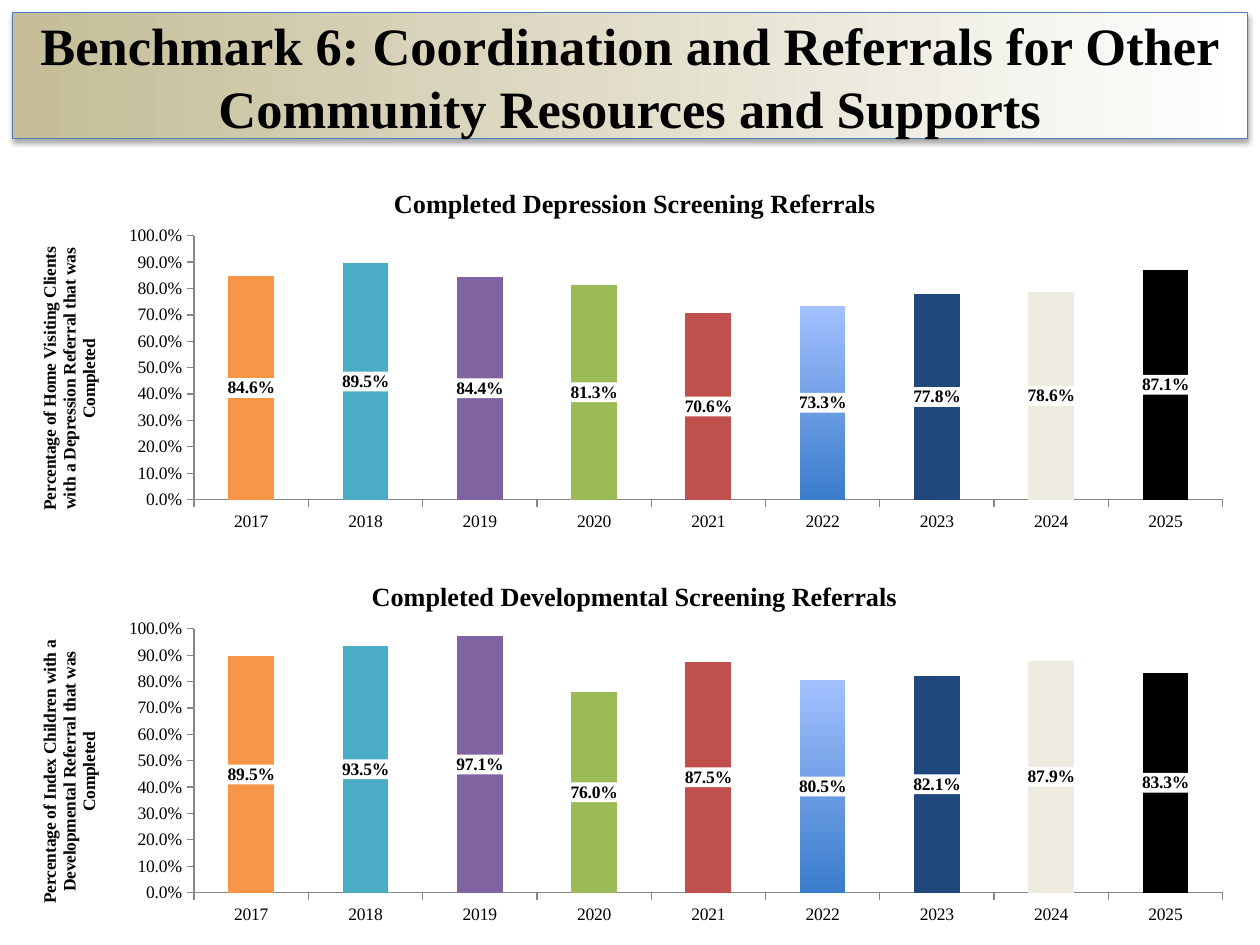
import lxml.etree
import pptx
import pptx.chart.data
import pptx.dml.color
import pptx.enum.chart
import pptx.enum.shapes
import pptx.enum.text
import pptx.oxml
import pptx.oxml.ns
import pptx.util

Pt = pptx.util.Pt
RGBColor = pptx.dml.color.RGBColor
qn = pptx.oxml.ns.qn

BLACK = RGBColor(0x00, 0x00, 0x00)
WHITE = RGBColor(0xFF, 0xFF, 0xFF)
TAN = RGBColor(0xC4, 0xBD, 0x97)
BANNER_LINE = RGBColor(0x4B, 0x7E, 0xBC)
AXIS_GRAY = RGBColor(0x86, 0x86, 0x86)
BLUE = RGBColor(0x4F, 0x81, 0xBD)
GRADIENT_BOTTOM = RGBColor(0x3A, 0x7C, 0xCB)
GRADIENT_TOP = RGBColor(0xA3, 0xC1, 0xFF)
YEAR_COLORS = {
    "2017": RGBColor(0xF7, 0x96, 0x46),
    "2018": RGBColor(0x4B, 0xAC, 0xC6),
    "2019": RGBColor(0x80, 0x64, 0xA2),
    "2020": RGBColor(0x9B, 0xBB, 0x59),
    "2021": RGBColor(0xC0, 0x50, 0x4D),
    "2022": None,  # gradient bar
    "2023": RGBColor(0x1F, 0x49, 0x7D),
    "2024": RGBColor(0xEE, 0xEC, 0xE1),
    "2025": BLACK,
}
SERIF = "Times New Roman"
PERCENT = "0.0%"
LEFT, WIDTH = Pt(7.2), Pt(705.6)

CHARTS = [
    ("Completed Depression Screening Referrals",
     "Percentage of Home Visiting Clients with a Depression Referral that was Completed",
     [0.846, 0.895, 0.844, 0.813, 0.706, 0.733, 0.778, 0.786, 0.871],
     92.2, 0.305),
    ("Completed Developmental Screening Referrals",
     "Percentage of Index Children with a Developmental Referral that was Completed",
     [0.895, 0.935, 0.971, 0.76, 0.875, 0.805, 0.821, 0.879, 0.833],
     316.8, 0.287),
]


def style_font(font, size, bold):
    font.name = SERIF
    font.size = Pt(size)
    font.bold = bold
    font.color.rgb = BLACK


def place(parent, following_tag, settings):
    """Give a chart title or plot area a manual layout."""
    for old_layout in parent.findall(qn("c:layout")):
        parent.remove(old_layout)
    layout = lxml.etree.Element(qn("c:layout"))
    manual = lxml.etree.SubElement(layout, qn("c:manualLayout"))
    for name, value in settings.items():
        lxml.etree.SubElement(manual, qn("c:" + name)).set("val", str(value))
    parent.find(qn(following_tag)).addprevious(layout)


presentation = pptx.Presentation()
presentation.slide_width = Pt(720)
presentation.slide_height = Pt(540)
slide = presentation.slides.add_slide(presentation.slide_layouts[6])

# Title banner
banner = slide.shapes.add_shape(
    pptx.enum.shapes.MSO_SHAPE.RECTANGLE, LEFT, Pt(7.2), WIDTH, Pt(72))
banner.fill.gradient()
banner.fill.gradient_angle = 0
for stop, color in zip(banner.fill.gradient_stops, (TAN, WHITE)):
    stop.color.rgb = color
banner.line.color.rgb = BANNER_LINE
banner.line.width = Pt(0.75)
banner.shadow.inherit = False
effects = banner._element.spPr.find(qn("a:effectLst"))
shadow = lxml.etree.SubElement(
    effects, qn("a:outerShdw"), blurRad=str(Pt(3.1)), dist=str(Pt(1.8)),
    dir="5400000", rotWithShape="0")
shadow_color = lxml.etree.SubElement(shadow, qn("a:srgbClr"), val="000000")
lxml.etree.SubElement(shadow_color, qn("a:alpha"), val="35000")

text_frame = banner.text_frame
text_frame.word_wrap = True
text_frame.vertical_anchor = pptx.enum.text.MSO_ANCHOR.MIDDLE
text_frame.text = ("Benchmark 6: Coordination and Referrals for Other "
                   "Community Resources and Supports")
paragraph = text_frame.paragraphs[0]
paragraph.alignment = pptx.enum.text.PP_ALIGN.CENTER
paragraph.line_spacing = Pt(36)
style_font(paragraph.runs[0].font, 30, True)

# Column charts
for title, axis_title, values, top, title_left in CHARTS:
    chart_data = pptx.chart.data.CategoryChartData(number_format=PERCENT)
    chart_data.categories = list(YEAR_COLORS)
    chart_data.add_series("Series 1", values)
    chart = slide.shapes.add_chart(
        pptx.enum.chart.XL_CHART_TYPE.COLUMN_CLUSTERED,
        LEFT, Pt(top), WIDTH, Pt(216), chart_data).chart
    chart.has_legend = False
    chart.font.name = "Calibri"
    chart.font.size = Pt(10)
    chart.font.color.rgb = BLACK

    # Chart title and plot position
    title_frame = chart.chart_title.text_frame
    title_frame.text = title
    style_font(title_frame.paragraphs[0].runs[0].font, 15, True)
    chart.chart_title.include_in_layout = False
    place(chart.chart_title._element, "c:overlay",
          {"xMode": "edge", "yMode": "edge", "x": title_left, "y": 0.055})
    place(chart._chartSpace.chart.plotArea, "c:barChart",
          {"layoutTarget": "inner", "xMode": "edge", "yMode": "edge",
           "x": 0.147, "y": 0.197, "w": 0.833, "h": 0.698})

    # Axes
    for axis in (chart.category_axis, chart.value_axis):
        axis.has_major_gridlines = False
        axis.major_tick_mark = pptx.enum.chart.XL_TICK_MARK.OUTSIDE
        axis.minor_tick_mark = pptx.enum.chart.XL_TICK_MARK.NONE
        axis.format.line.color.rgb = AXIS_GRAY
        axis.format.line.width = Pt(0.75)
        style_font(axis.tick_labels.font, 10, False)
    value_axis = chart.value_axis
    value_axis.minimum_scale = 0
    value_axis.maximum_scale = 1
    value_axis.major_unit = 0.1
    value_axis.tick_labels.number_format = PERCENT
    value_axis.tick_labels.number_format_is_linked = False
    axis_frame = value_axis.axis_title.text_frame
    axis_frame.text = axis_title
    style_font(axis_frame.paragraphs[0].runs[0].font, 10, True)

    # Bars, one colour per year
    plot = chart.plots[0]
    plot.gap_width = 150
    plot.vary_by_categories = False
    series = plot.series[0]
    series.format.fill.solid()
    series.format.fill.fore_color.rgb = BLUE
    for index, color in enumerate(YEAR_COLORS.values()):
        fill = series.points[index].format.fill
        if color is None:
            fill.gradient()
            fill.gradient_angle = 90
            for stop, stop_color in zip(
                    fill.gradient_stops, (GRADIENT_BOTTOM, GRADIENT_TOP)):
                stop.color.rgb = stop_color
        else:
            fill.solid()
            fill.fore_color.rgb = color

    # Value labels on white
    labels = series.data_labels
    labels.show_value = True
    labels.number_format = PERCENT
    labels.number_format_is_linked = False
    labels.position = pptx.enum.chart.XL_LABEL_POSITION.CENTER
    style_font(labels.font, 10, True)
    label_properties = lxml.etree.Element(qn("c:spPr"))
    label_fill = lxml.etree.SubElement(label_properties, qn("a:solidFill"))
    lxml.etree.SubElement(label_fill, qn("a:srgbClr"), val=str(WHITE))
    labels._element.find(qn("c:txPr")).addprevious(label_properties)

presentation.save("out.pptx")
